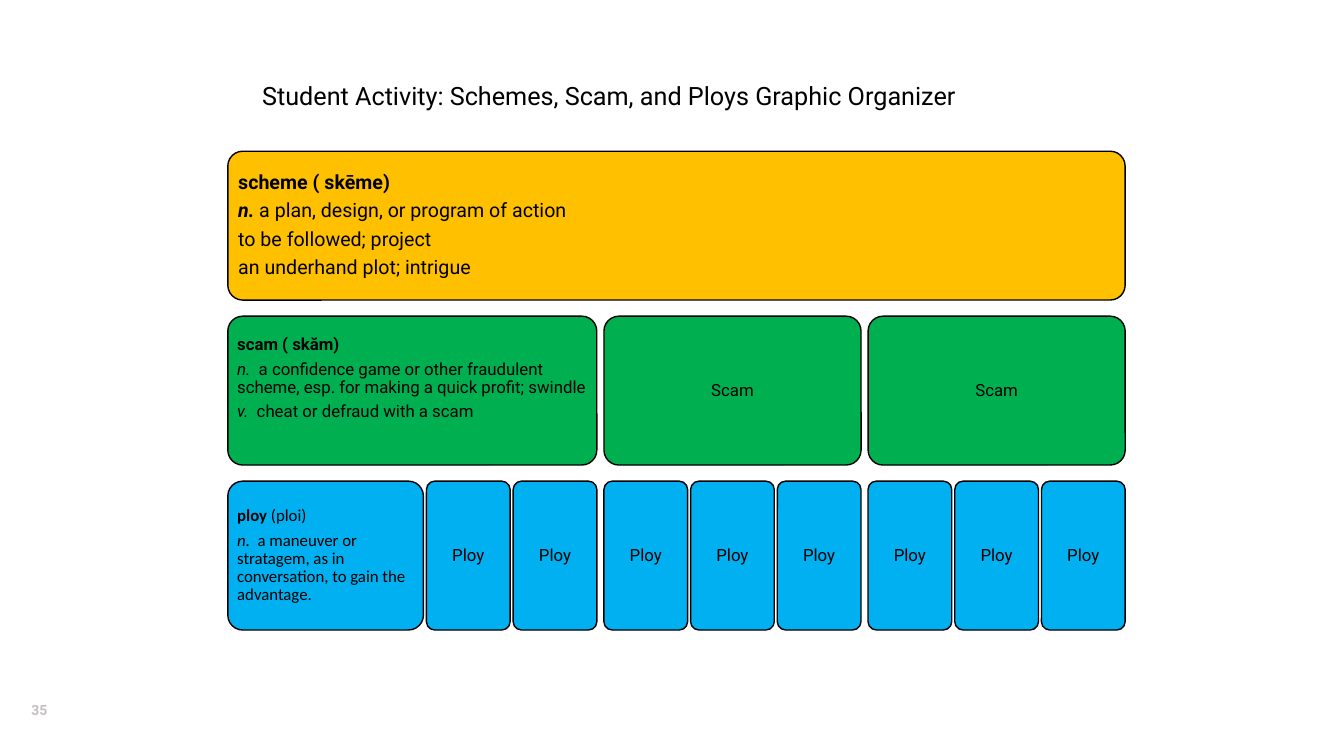
from pptx import Presentation
from pptx.dml.color import RGBColor
from pptx.enum.shapes import MSO_SHAPE
from pptx.enum.text import MSO_ANCHOR, MSO_AUTO_SIZE, PP_ALIGN
from pptx.util import Inches, Pt

BLACK = RGBColor(0x00, 0x00, 0x00)
GRAY = RGBColor(0xC4, 0xBF, 0xC0)
AMBER = RGBColor(0xFF, 0xC0, 0x00)
GREEN = RGBColor(0x00, 0xB0, 0x50)
BLUE = RGBColor(0x00, 0xB0, 0xF0)

ORGANIZER_BOX = (2.26, 1.5, 8.9, 4.75)
ROW_GAP = 0.16
GROUP_GAP = 0.07
PLOY_GAP = 0.03
PLOY_WIDTH = 0.83
PLOYS_PER_GROUP = (2, 3, 3)
PLOY_DEFINITION_WIDTH = 1.94

SCHEME_TEXT = [
    [("scheme ( skēme)", "b")],
    [("n. ", "bi"), ("a plan, design, or program of action", "")],
    [("to be followed; project", "")],
    [("an underhand plot; intrigue", "")],
]
SCAM_TEXT = [
    [("scam ( skăm)", "b")],
    [("n.  ", "i"), ("a confidence game or other fraudulent scheme, "
                     "esp. for making a quick profit; swindle", "")],
    [("v.  ", "i"), ("cheat or defraud with a scam", "")],
]
PLOY_TEXT = [
    [("ploy", "b"), (" (ploi)", "")],
    [("n.", "i"), ("  a maneuver or stratagem, as in conversation, "
                   "to gain the advantage.", "")],
]


def write_text(text_frame, paragraphs, size=12, font="Roboto", color=BLACK,
               align=PP_ALIGN.LEFT, line_spacing=0.9, space_after=4.5):
    for index, runs in enumerate(paragraphs):
        paragraph = text_frame.paragraphs[0] if index == 0 else text_frame.add_paragraph()
        paragraph.alignment = align
        paragraph.line_spacing = line_spacing
        paragraph.space_after = Pt(space_after)
        for text, style in runs:
            run = paragraph.add_run()
            run.text = text
            run.font.size = Pt(size)
            run.font.name = font
            run.font.color.rgb = color
            run.font.bold = "b" in style
            run.font.italic = "i" in style


def add_card(slide, box, fill, paragraphs, inset=0.05, bottom_inset=0.05, **text_format):
    shape = slide.shapes.add_shape(MSO_SHAPE.ROUNDED_RECTANGLE, *map(Inches, box))
    shape.adjustments[0] = 0.1
    shape.shadow.inherit = False
    shape.fill.solid()
    shape.fill.fore_color.rgb = fill
    shape.line.color.rgb = BLACK
    shape.line.width = Pt(1)
    text_frame = shape.text_frame
    text_frame.word_wrap = True
    text_frame.vertical_anchor = MSO_ANCHOR.MIDDLE
    text_frame.margin_left = text_frame.margin_right = text_frame.margin_top = Inches(inset)
    text_frame.margin_bottom = Inches(bottom_inset)
    write_text(text_frame, paragraphs, **text_format)


def add_label_card(slide, box, fill, label):
    add_card(slide, box, fill, [[(label, "")]], align=PP_ALIGN.CENTER)


def add_organizer(slide, box):
    left, top, width, height = box
    row_height = (height - 2 * ROW_GAP) / 3
    scheme_top, scam_top, ploy_top = (top + row * (row_height + ROW_GAP) for row in range(3))
    add_card(slide, (left, scheme_top, width, row_height), AMBER, SCHEME_TEXT,
             inset=0.06, bottom_inset=0.06, size=14, space_after=5)

    group_left = left
    for group, ploy_count in enumerate(PLOYS_PER_GROUP):
        ploy_left = group_left
        if group == 0:
            add_card(slide, (ploy_left, ploy_top, PLOY_DEFINITION_WIDTH, row_height),
                     BLUE, PLOY_TEXT, font="Calibri")
            ploy_left += PLOY_DEFINITION_WIDTH + PLOY_GAP
        for _ in range(ploy_count):
            add_label_card(slide, (ploy_left, ploy_top, PLOY_WIDTH, row_height), BLUE, "Ploy")
            ploy_left += PLOY_WIDTH + PLOY_GAP

        group_width = ploy_left - PLOY_GAP - group_left
        scam_box = (group_left, scam_top, group_width, row_height)
        if group == 0:
            add_card(slide, scam_box, GREEN, SCAM_TEXT, bottom_inset=0.28)
        else:
            add_label_card(slide, scam_box, GREEN, "Scam")
        group_left += group_width + GROUP_GAP


def add_title(slide, box):
    title = slide.shapes.title
    title.left, title.top, title.width, title.height = map(Inches, box)
    title.text_frame.word_wrap = True
    title.text_frame.vertical_anchor = MSO_ANCHOR.TOP
    title.text_frame.auto_size = MSO_AUTO_SIZE.SHAPE_TO_FIT_TEXT
    write_text(title.text_frame,
               [[("Student Activity: Schemes, Scam, and Ploys Graphic Organizer", "")]],
               size=18, line_spacing=1, space_after=0)


def add_page_number(slide, box):
    shape = slide.shapes.add_shape(MSO_SHAPE.OVAL, *map(Inches, box))
    shape.shadow.inherit = False
    shape.fill.background()
    shape.line.fill.background()
    text_frame = shape.text_frame
    text_frame.vertical_anchor = MSO_ANCHOR.MIDDLE
    text_frame.margin_left = text_frame.margin_right = Inches(0.02)
    write_text(text_frame, [[("35", "b")]], size=10, color=GRAY,
               align=PP_ALIGN.CENTER, line_spacing=1, space_after=0)


def main():
    presentation = Presentation()
    presentation.slide_width = Inches(13.33)
    presentation.slide_height = Inches(7.5)
    slide = presentation.slides.add_slide(presentation.slide_layouts[5])
    add_page_number(slide, (0, 6.83, 0.78, 0.42))
    add_organizer(slide, ORGANIZER_BOX)
    add_title(slide, (2.5, 0.75, 8.5, 0.4))
    presentation.save("out.pptx")


if __name__ == "__main__":
    main()
